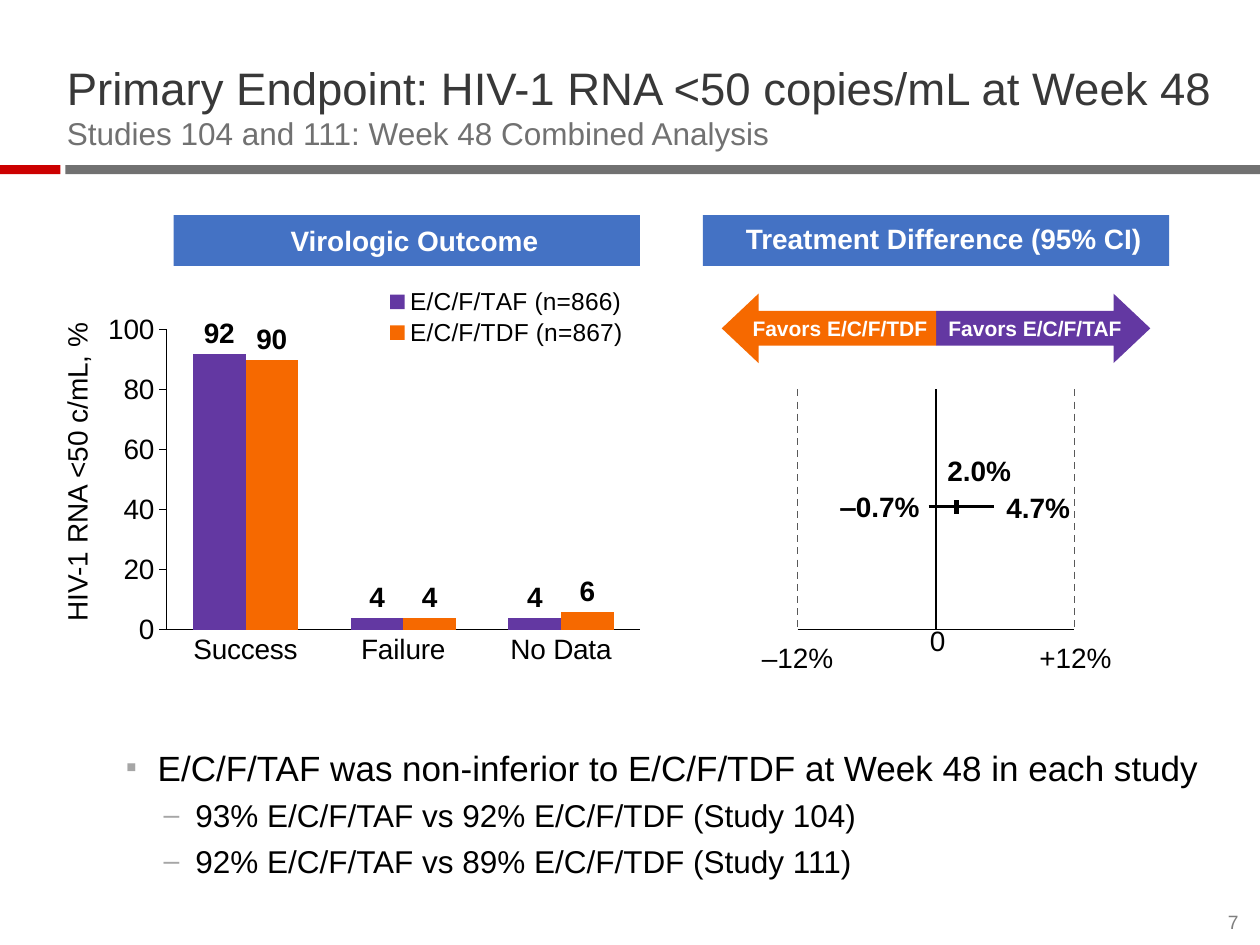
from lxml import etree
from pptx import Presentation
from pptx.chart.data import CategoryChartData
from pptx.dml.color import RGBColor
from pptx.enum.chart import XL_CHART_TYPE, XL_LABEL_POSITION, XL_LEGEND_POSITION, XL_TICK_MARK
from pptx.enum.dml import MSO_LINE
from pptx.enum.shapes import MSO_CONNECTOR, MSO_SHAPE
from pptx.enum.text import MSO_ANCHOR, PP_ALIGN
from pptx.oxml.ns import qn
from pptx.util import Cm, Pt

RECT, LEFT_ARROW, RIGHT_ARROW = MSO_SHAPE.RECTANGLE, MSO_SHAPE.LEFT_ARROW, MSO_SHAPE.RIGHT_ARROW
STRAIGHT, DASH = MSO_CONNECTOR.STRAIGHT, MSO_LINE.DASH
LEFT, CENTER, RIGHT = PP_ALIGN.LEFT, PP_ALIGN.CENTER, PP_ALIGN.RIGHT
TOP, MIDDLE, BOTTOM = MSO_ANCHOR.TOP, MSO_ANCHOR.MIDDLE, MSO_ANCHOR.BOTTOM
COLUMN, OUT_END = XL_CHART_TYPE.COLUMN_CLUSTERED, XL_LABEL_POSITION.OUTSIDE_END
LEGEND_TOP = XL_LEGEND_POSITION.TOP
NO_TICK, TICK_OUT = XL_TICK_MARK.NONE, XL_TICK_MARK.OUTSIDE

COLORS = {
    "black": "000000", "white": "FFFFFF", "title": "383838", "grey": "717171",
    "red": "CC0000", "blue": "4472C4", "taf": "6338A2", "tdf": "F66900",
    "dash": "595959", "bullet": "A6A6A6", "number": "7F7F7F",
}
FONT = "Arial"
PAD = (0.25, 0.13, 0.25, 0.13)
NONE = (0, 0, 0, 0)


def rgb(name):
    return RGBColor.from_string(COLORS[name])


def style(font, size, color="black", bold=False):
    font.name, font.size, font.bold = FONT, Pt(size), bold
    font.color.rgb = rgb(color)


def write(frame, text, size=16, color="black", bold=False, align=LEFT, anchor=MIDDLE,
          inset=PAD, wrap=True, spacing=None, first=True):
    """Put text in the first paragraph of the frame, or in a new one."""
    frame.word_wrap, frame.vertical_anchor = wrap, anchor
    (frame.margin_left, frame.margin_top,
     frame.margin_right, frame.margin_bottom) = map(Cm, inset)
    para = frame.paragraphs[0] if first else frame.add_paragraph()
    para.alignment = align
    if spacing:
        para.line_spacing = spacing
    run = para.add_run()
    run.text = text
    style(run.font, size, color, bold)
    return para


def bullet(para, char, margin):
    props = para._p.get_or_add_pPr()
    props.set("marL", str(Cm(margin)))
    props.set("indent", str(-Cm(0.64)))
    tint = etree.SubElement(props, qn("a:buClr"))
    etree.SubElement(tint, qn("a:srgbClr"), val=COLORS["bullet"])
    etree.SubElement(props, qn("a:buSzPct"), val="90000")
    etree.SubElement(props, qn("a:buFont"), typeface=FONT)
    etree.SubElement(props, qn("a:buChar"), char=char)


def place(x, y, w, h, inner=False):
    """Make a manual chart layout from fractions of the chart's size."""
    layout = etree.Element(qn("c:layout"))
    manual = etree.SubElement(layout, qn("c:manualLayout"))
    if inner:
        etree.SubElement(manual, qn("c:layoutTarget"), val="inner")
    for key in ("xMode", "yMode"):
        etree.SubElement(manual, qn("c:" + key), val="edge")
    for key, part in zip("xywh", (x, y, w, h)):
        etree.SubElement(manual, qn("c:" + key), val=str(part))
    return layout


class Deck:
    """Holds the style and the current slide."""

    def __init__(self, show):
        self.shapes = show.slides.add_slide(show.slide_layouts[6]).shapes

    def box(self, x, y, w, h, fill, kind=RECT):
        shape = self.shapes.add_shape(kind, Cm(x), Cm(y), Cm(w), Cm(h))
        shape.shadow.inherit = False
        shape.fill.solid()
        shape.fill.fore_color.rgb = rgb(fill)
        shape.line.fill.background()
        return shape

    def arrow(self, x, text, fill, kind):
        shape = self.box(x, 5.92, 4.32, 1.4, fill, kind)
        shape.adjustments[0], shape.adjustments[1] = 0.5, 0.53
        write(shape.text_frame, text, size=12, color="white", bold=True, wrap=False)

    def text(self, x, y, w, h, text, turn=0, **form):
        shape = self.shapes.add_textbox(Cm(x), Cm(y), Cm(w), Cm(h))
        shape.rotation = turn
        write(shape.text_frame, text, **form)
        return shape.text_frame

    def line(self, x1, y1, x2, y2, color="black", width=1, dash=None):
        line = self.shapes.add_connector(STRAIGHT, Cm(x1), Cm(y1), Cm(x2), Cm(y2))
        line.line.color.rgb = rgb(color)
        line.line.width = Pt(width)
        if dash:
            line.line.dash_style = dash
        etree.SubElement(line._element.spPr, qn("a:effectLst"))

    def chart(self, x, y, w, h, cats, rows):
        data = CategoryChartData()
        data.categories = cats
        for name, vals, _ in rows:
            data.add_series(name, vals)
        chart = self.shapes.add_chart(COLUMN, Cm(x), Cm(y), Cm(w), Cm(h), data).chart
        style(chart.font, 10)
        chart.has_title = False
        chart.has_legend = True
        legend = chart.legend
        legend.position, legend.include_in_layout = LEGEND_TOP, False
        style(legend.font, 14)
        legend._element.find(qn("c:legendPos")).addnext(place(0.5, 0.16, 0.43, 0.13))

        for axis, tick in ((chart.category_axis, NO_TICK), (chart.value_axis, TICK_OUT)):
            axis.major_tick_mark, axis.minor_tick_mark = tick, NO_TICK
            axis.has_major_gridlines = False
            axis.format.line.color.rgb = rgb("black")
            axis.format.line.width = Pt(0.75)
            style(axis.tick_labels.font, 16)
        scale = chart.value_axis
        scale.minimum_scale, scale.maximum_scale, scale.major_unit = 0, 100, 20

        plot = chart.plots[0]
        plot.gap_width, plot.overlap, plot.vary_by_categories = 100, 0, False
        for series, (_, _, color) in zip(plot.series, rows):
            series.format.fill.solid()
            series.format.fill.fore_color.rgb = rgb(color)
            labels = series.data_labels
            labels.show_value, labels.position = True, OUT_END
            style(labels.font, 16, bold=True)
        area = chart._chartSpace.chart.plotArea
        for old in area.findall(qn("c:layout")):
            area.remove(old)
        area.insert(0, place(0.114, 0.25, 0.837, 0.603, inner=True))


def main():
    show = Presentation()
    show.slide_width, show.slide_height = Cm(25.4), Cm(19.05)
    deck = Deck(show)

    deck.box(1.32, 3.33, 24.08, 0.18, "grey")
    deck.box(0, 3.33, 1.22, 0.18, "red")
    head = deck.text(1.35, 1.19, 23.22, 1.88, "Primary Endpoint: HIV-1 RNA <50 copies/mL at Week 48",
                     size=26, color="title", anchor=BOTTOM, inset=NONE)
    write(head, "Studies 104 and 111: Week 48 Combined Analysis",
          size=18, color="grey", anchor=BOTTOM, inset=NONE, first=False)

    points = (
        ("E/C/F/TAF was non-inferior to E/C/F/TDF at Week 48 in each study", 20, "▪", 0.64),
        ("93% E/C/F/TAF vs 92% E/C/F/TDF (Study 104)", 18, "–", 1.4),
        ("92% E/C/F/TAF vs 89% E/C/F/TDF (Study 111)", 18, "–", 1.4),
    )
    body = deck.shapes.add_textbox(Cm(2.54), Cm(15.04), Cm(22.43), Cm(2.54)).text_frame
    for row, (text, size, char, margin) in enumerate(points):
        para = write(body, text, size=size, anchor=TOP, inset=NONE, first=row == 0)
        para.space_before = Pt(4.5)
        bullet(para, char, margin)

    # Treatment difference: the scale runs from -12% to +12%
    low, mid, high, top, base = 16.08, 18.87, 21.66, 7.85, 12.69
    for x in (low, high):
        deck.line(x, top, x, base, "dash", dash=DASH)
    deck.line(mid, top, mid, base)
    deck.line(low, base, high, base)
    deck.line(18.72, 10.21, 20.04, 10.21, width=1.88)
    deck.line(19.28, 10.08, 19.28, 10.36, width=3)
    for x, y, text in ((20.04, 9.75, "4.7%"), (16.69, 9.73, "‒0.7%"), (18.85, 9.02, "2.0%")):
        deck.text(x, y, 2.5, 0.94, text, bold=True)
    for x, y, text in ((low, 12.78, "‒12%"), (18.9, 12.45, "0"), (high + 0.02, 12.78, "+12%")):
        deck.text(x - 1.02, y, 2.04, 1.02, text, align=CENTER, spacing=0.9)
    deck.arrow(mid, "Favors E/C/F/TAF", "taf", RIGHT_ARROW)
    deck.arrow(mid - 4.32, "Favors E/C/F/TDF", "tdf", LEFT_ARROW)

    deck.text(-2.26, 9.17, 7.6, 0.69, "HIV-1 RNA <50 c/mL, %", turn=270,
              align=CENTER, inset=NONE)
    deck.chart(2.06, 4.14, 11.4, 10.03, ("Success", "Failure", "No Data"), (
        ("E/C/F/TAF (n=866)", (92, 4, 4), "taf"),
        ("E/C/F/TDF (n=867)", (90, 4, 6), "tdf"),
    ))
    for x, text, spacing in ((14.17, "Treatment Difference (95% CI)", 0.9),
                             (3.5, "Virologic Outcome", None)):
        bar = deck.box(x, 4.34, 9.4, 1.02, "blue")
        write(bar.text_frame, text, color="white", bold=True, align=CENTER,
              inset=(0.56, 0.13, 0.25, 0.13), spacing=spacing)
    deck.text(24.28, 18.36, 0.69, 0.46, "7", size=11, color="number",
              align=RIGHT, anchor=BOTTOM, inset=NONE)
    show.save("out.pptx")


if __name__ == "__main__":
    main()
